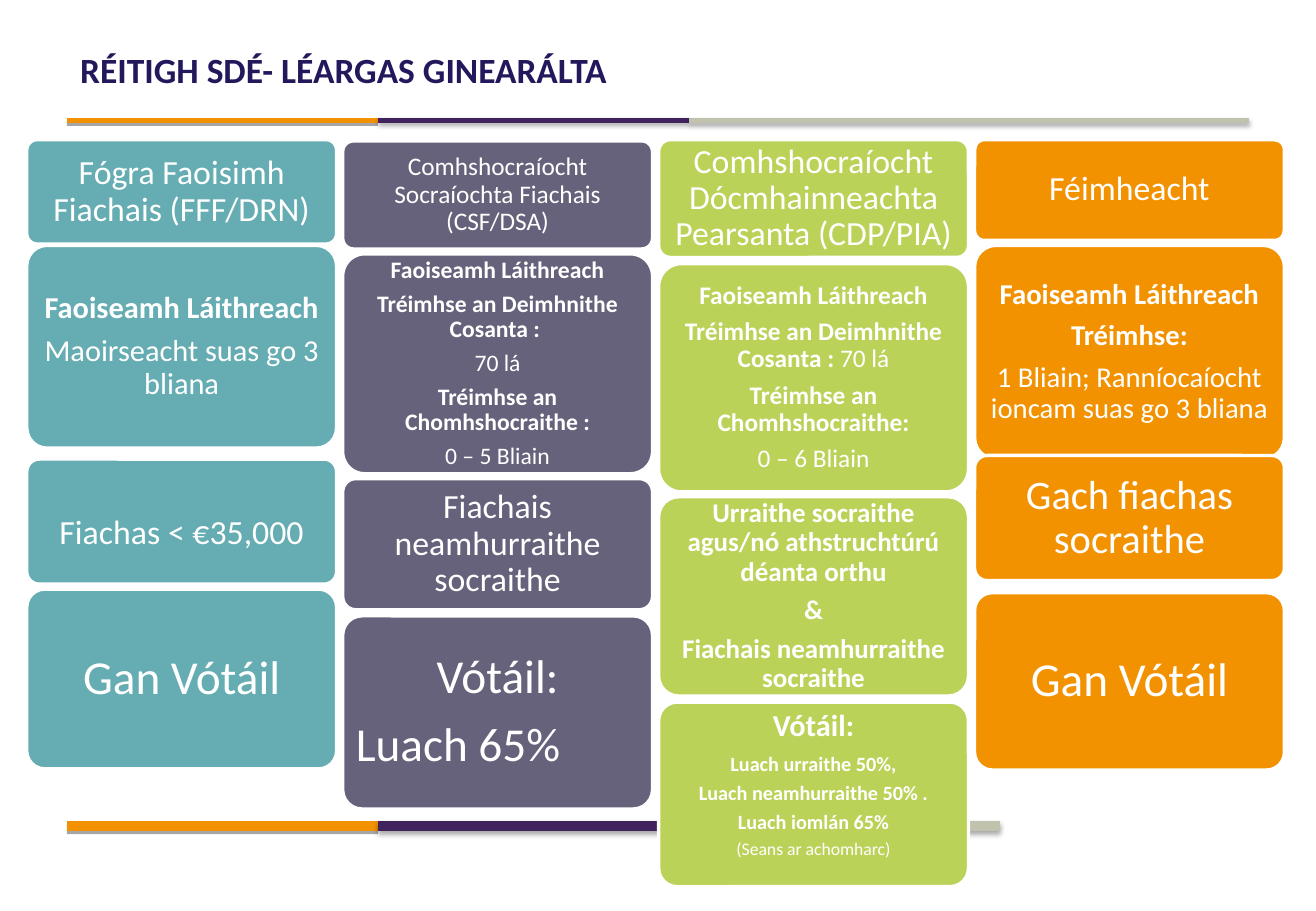
from dataclasses import dataclass
from itertools import pairwise

from lxml.etree import SubElement
from pptx import Presentation
from pptx.dml.color import RGBColor
from pptx.enum.shapes import MSO_CONNECTOR, MSO_SHAPE
from pptx.enum.text import MSO_ANCHOR, PP_ALIGN
from pptx.oxml.ns import qn
from pptx.util import Inches, Pt


@dataclass(frozen=True)
class Theme:
    font: str = "Calibri"
    white: str = "FFFFFF"
    navy: str = "24185C"
    orange: str = "F39200"
    purple: str = "40225C"
    stone: str = "C1C2AE"
    teal: str = "65ADB2"
    slate: str = "66627B"
    lime: str = "BBD259"
    shadow: str = "000000"
    title: float = 21
    vote: float = 28
    debt: float = 24
    large: float = 20
    lead: float = 18
    term: float = 17
    body: float = 16
    compact: float = 15
    small: float = 14
    detail: float = 12
    note: float = 10.5


THEME = Theme()
CORNER = 0.1
CORNER_INSET = 0.03
SPACE_AFTER = 0.35


def apply(target, values):
    for name, value in values.items():
        setattr(target, name, value)


def plain(size, text):
    return size, [(text, False)]


def strong(size, text):
    return size, [(text, True)]


class SlideBuilder:
    def __init__(self, page, theme):
        self.page = page
        self.theme = theme

    def add_spans(self, para, size, spans, color):
        for text, bold in spans:
            span = para.add_run()
            span.text = text
            apply(span.font, {"name": self.theme.font, "size": Pt(size), "bold": bold})
            span.font.color.rgb = RGBColor.from_string(color)

    def frame(self, box, inset, extra_top=0, anchor=MSO_ANCHOR.MIDDLE):
        apply(box.text_frame, {
            "word_wrap": True,
            "vertical_anchor": anchor,
            "margin_left": Inches(inset),
            "margin_right": Inches(inset),
            "margin_top": Inches(inset + extra_top),
            "margin_bottom": Inches(inset),
        })
        return box.text_frame

    def title(self, text):
        box = self.page.shapes.add_textbox(Inches(0.54), Inches(0.3), Inches(9.75), Inches(0.54))
        frame = self.frame(box, 0.12)
        apply(frame, {"margin_top": Inches(0.06), "margin_bottom": Inches(0.06)})
        self.add_spans(frame.paragraphs[0], self.theme.title, [(text, True)], self.theme.navy)

    def rule(self, start, end, y, color, weight, blur):
        line = self.page.shapes.add_connector(
            MSO_CONNECTOR.STRAIGHT, Inches(start), Inches(y), Inches(end), Inches(y))
        line.line.color.rgb = RGBColor.from_string(color)
        line.line.width = Pt(weight)
        effects = SubElement(line._element.spPr, qn("a:effectLst"))
        shadow = SubElement(effects, qn("a:outerShdw"), {
            "blurRad": str(Pt(blur)), "dist": str(Pt(1.8)), "dir": "5400000", "rotWithShape": "0"})
        tint = SubElement(shadow, qn("a:srgbClr"), val=self.theme.shadow)
        SubElement(tint, qn("a:alpha"), val="35000")

    def band(self, edges, y, weight):
        colors = (self.theme.orange, self.theme.purple, self.theme.stone)
        for (start, end), color, blur in zip(pairwise(edges), colors, (0, 3.1, 3.1)):
            self.rule(start, end, y, color, weight, blur)

    def card(self, left, top, height, color, inset, paras, **layout):
        width = 2.55
        box = self.page.shapes.add_shape(
            MSO_SHAPE.ROUNDED_RECTANGLE, Inches(left), Inches(top), Inches(width), Inches(height))
        box.adjustments[0] = CORNER
        box.shadow.inherit = False
        box.fill.solid()
        box.fill.fore_color.rgb = RGBColor.from_string(color)
        box.line.color.rgb = RGBColor.from_string(self.theme.white)
        box.line.width = Pt(2)
        align_last = layout.pop("align_last", PP_ALIGN.CENTER)
        frame = self.frame(box, inset - CORNER_INSET * min(width, height), **layout)
        for index, (size, spans) in enumerate(paras):
            para = frame.add_paragraph() if index else frame.paragraphs[0]
            apply(para, {
                "alignment": align_last if index == len(paras) - 1 else PP_ALIGN.CENTER,
                "line_spacing": 0.9,
                "space_after": Pt(SPACE_AFTER * size),
            })
            self.add_spans(para, size, spans, self.theme.white)

    def column(self, index, color, cards):
        for top, height, inset, paras, layout in cards:
            self.card(0.22 + 2.6 * index, top, height, color, inset, paras, **layout)


RELIEF = "Faoiseamh Láithreach"
CERTIFICATE = "Tréimhse an Deimhnithe Cosanta : "
NO_VOTE = [plain(THEME.vote, "Gan Vótáil")]

DEBT_RELIEF = [
    (1.15, 0.86, 0.08, [plain(THEME.large, "Fógra Faoisimh Fiachais (FFF/DRN)")], {}),
    (2.02, 1.67, 0.07, [
        strong(THEME.lead, RELIEF),
        plain(THEME.lead, "Maoirseacht suas go 3 bliana"),
    ], {}),
    (3.78, 1.03, 0.08, [plain(THEME.large, "Fiachas < €35,000")], {"extra_top": 0.2}),
    (4.85, 1.48, 0.12, NO_VOTE, {}),
]
DEBT_SETTLEMENT = [
    (1.16, 0.89, 0.06, [
        plain(THEME.compact, "Comhshocraíocht Socraíochta Fiachais (CSF/DSA)"),
    ], {}),
    (2.09, 1.81, 0.06, [
        strong(THEME.small, RELIEF),
        strong(THEME.small, CERTIFICATE),
        plain(THEME.small, "70 lá"),
        strong(THEME.small, "Tréimhse an Chomhshocraithe :"),
        plain(THEME.small, "0 – 5 Bliain"),
    ], {}),
    (3.94, 1.08, 0.08, [plain(THEME.large, "Fiachais neamhurraithe socraithe")], {}),
    (5.07, 1.59, 0.11, [
        plain(THEME.vote, "Vótáil:"),
        plain(THEME.vote, "Luach 65%"),
    ], {"align_last": PP_ALIGN.LEFT}),
]
PERSONAL_INSOLVENCY = [
    (1.15, 0.97, 0.08, [
        plain(THEME.large, "Comhshocraíocht Dócmhainneachta Pearsanta (CDP/PIA)"),
    ], {}),
    (2.17, 1.88, 0.06, [
        strong(THEME.compact, RELIEF),
        (THEME.compact, [(CERTIFICATE, True), ("70 lá", False)]),
        strong(THEME.compact, "Tréimhse an Chomhshocraithe:"),
        plain(THEME.compact, "0 – 6 Bliain"),
    ], {}),
    (4.09, 1.64, 0.07, [
        strong(THEME.body, "Urraithe socraithe agus/nó athstruchtúrú déanta orthu"),
        strong(THEME.body, "&"),
        strong(THEME.body, "Fiachais neamhurraithe socraithe"),
    ], {}),
    (5.78, 1.52, 0.07, [
        strong(THEME.lead, "Vótáil:"),
        strong(THEME.detail, "Luach urraithe 50%,"),
        strong(THEME.detail, "Luach neamhurraithe 50% ."),
        strong(THEME.detail, "Luach iomlán 65%"),
        plain(THEME.note, "(Seans ar achomharc)"),
    ], {"anchor": MSO_ANCHOR.TOP}),
]
BANKRUPTCY = [
    (1.15, 0.83, 0.08, [plain(THEME.large, "Féimheacht")], {}),
    (2.02, 1.76, 0.07, [
        strong(THEME.term, RELIEF),
        strong(THEME.term, "Tréimhse:"),
        plain(THEME.term, "1 Bliain; Ranníocaíocht ioncam suas go 3 bliana"),
    ], {}),
    (3.75, 1.03, 0.1, [plain(THEME.debt, "Gach fiachas socraithe")], {}),
    (4.88, 1.46, 0.12, NO_VOTE, {}),
]


def main():
    deck = Presentation()
    apply(deck, {"slide_width": Inches(10.83), "slide_height": Inches(7.5)})
    builder = SlideBuilder(deck.slides.add_slide(deck.slide_layouts[6]), THEME)
    builder.band((0.55, 3.11, 5.67, 10.28), 0.99, 3)
    builder.band((0.55, 3.11, 5.67, 8.23), 6.8, 6)
    builder.title("RÉITIGH SDÉ- LÉARGAS GINEARÁLTA")
    colors = (THEME.teal, THEME.slate, THEME.lime, THEME.orange)
    columns = (DEBT_RELIEF, DEBT_SETTLEMENT, PERSONAL_INSOLVENCY, BANKRUPTCY)
    for index, (color, cards) in enumerate(zip(colors, columns)):
        builder.column(index, color, cards)
    deck.save("out.pptx")


if __name__ == "__main__":
    main()
